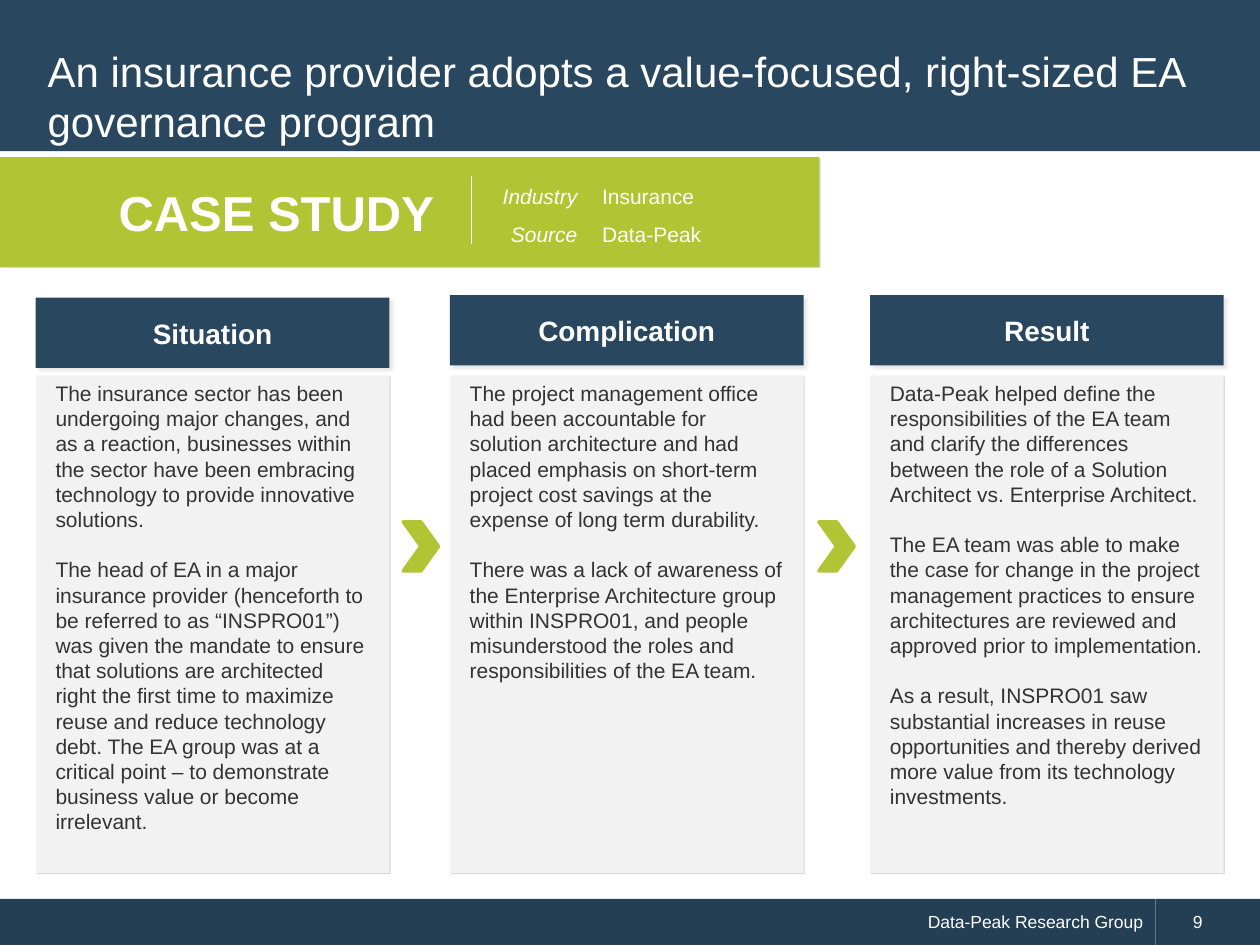
from lxml import etree
from pptx import Presentation
from pptx import util as u
from pptx.dml.color import RGBColor
from pptx.enum import shapes, text
from pptx.oxml import ns

NAVY, DARK_NAVY, LIME = "29475F", "243F54", "B0C534"
WHITE, PALE_GREY, CHARCOAL = "FFFFFF", "F2F2F2", "333333"
LEFT, CENTER, RIGHT = text.PP_ALIGN.LEFT, text.PP_ALIGN.CENTER, text.PP_ALIGN.RIGHT
TOP, MIDDLE = text.MSO_ANCHOR.TOP, text.MSO_ANCHOR.MIDDLE
HEADING_SHADOW = {"alpha": 10, "blur": 2, "distance": 2}
SOFT_SHADOW = {"alpha": 14, "blur": 0, "distance": 1}

COLUMNS = [
    ("Situation", 0.72, 6.0, [
        "The insurance sector has been undergoing major changes, and as a reaction, businesses "
        "within the sector have been embracing technology to provide innovative solutions.",
        "The head of EA in a major insurance provider (henceforth to be referred to as “INSPRO01”) "
        "was given the mandate to ensure that solutions are architected right the first time to "
        "maximize reuse and reduce technology debt. The EA group was at a critical point – to "
        "demonstrate business value or become irrelevant.",
    ]),
    ("Complication", 9.07, 5.95, [
        "The project management office had been accountable for solution architecture and had "
        "placed emphasis on short-term project cost savings at the expense of long term durability.",
        "There was a lack of awareness of the Enterprise Architecture group within INSPRO01, and "
        "people misunderstood the roles and responsibilities of the EA team.",
    ]),
    ("Result", 17.54, 5.95, [
        "Data-Peak helped define the responsibilities of the EA team and clarify the differences "
        "between the role of a Solution Architect vs. Enterprise Architect.",
        "The EA team was able to make the case for change in the project management practices to "
        "ensure architectures are reviewed and approved prior to implementation.",
        "As a result, INSPRO01 saw substantial increases in reuse opportunities and thereby "
        "derived more value from its technology investments.",
    ]),
]


def color(hex_string):
    """Turn a hex string into a colour."""
    return RGBColor.from_string(hex_string)


def add_effects(shape, shadow=None):
    """Give a shape its own effect list, with an outer shadow if one is described."""
    properties = shape._element.spPr
    effects = etree.SubElement(properties, ns.qn("a:effectLst"))
    if shadow:
        outer = etree.SubElement(
            effects, ns.qn("a:outerShdw"), blurRad=str(u.Pt(shadow["blur"])),
            dist=str(u.Pt(shadow["distance"])), dir="2700000", algn="tl", rotWithShape="0")
        tint = etree.SubElement(outer, ns.qn("a:srgbClr"), val="000000")
        etree.SubElement(tint, ns.qn("a:alpha"), val=str(shadow["alpha"] * 1000))


def add_block(parent, box, fill, shadow=None, preset=shapes.MSO_SHAPE.RECTANGLE):
    """Draw a filled preset shape without an outline."""
    shape = parent.add_shape(preset, *map(u.Cm, box))
    shape.fill.solid()
    shape.fill.fore_color.rgb = color(fill)
    shape.line.fill.background()
    add_effects(shape, shadow)
    return shape


def write(shape, paragraphs, size, font_color=WHITE, bold=False, italic=False, align=LEFT,
          anchor=MIDDLE, insets=(0.25, 0.13), left_inset=None, line_spacing=None, gap=0):
    """Write paragraphs of one style into a shape."""
    frame = shape.text_frame
    frame.word_wrap = True
    frame.vertical_anchor = anchor
    side, edge = map(u.Cm, insets)
    frame.margin_left = side if left_inset is None else u.Cm(left_inset)
    frame.margin_right = side
    frame.margin_top = frame.margin_bottom = edge
    for index, content in enumerate(paragraphs):
        paragraph = frame.add_paragraph() if index else frame.paragraphs[0]
        paragraph.alignment = align
        paragraph.line_spacing = line_spacing
        paragraph.space_before = u.Pt(gap if index else 0)
        run = paragraph.add_run()
        run.text = content
        run.font.name = "Arial"
        run.font.size = u.Pt(size)
        run.font.bold = bold
        run.font.italic = italic
        run.font.color.rgb = color(font_color)


def add_footer(slide, left, top, width, height):
    """Draw the footer band with the publisher and the page number."""
    number_width = 2.11
    split = width - number_width
    publisher = add_block(slide.shapes, (left, top, split, height), DARK_NAVY)
    write(publisher, ["Data-Peak Research Group"], 10, align=RIGHT)
    number = add_block(slide.shapes, (left + split, top, number_width, height), DARK_NAVY)
    write(number, ["9"], 10, left_inset=0.76)


def add_title(slide, left, top, width, height):
    """Draw the title band and its heading."""
    add_block(slide.shapes, (left, top, width, height), NAVY)
    box = (left + 0.71, top + 0.71, width - 1.45, 2.44)
    title = slide.shapes.add_textbox(*map(u.Cm, box))
    write(title, ["An insurance provider adopts a value-focused, right-sized EA governance program"], 24)


def add_banner(slide, left, top, width, height):
    """Draw the case study banner with its industry and source."""
    group = slide.shapes.add_group_shape().shapes
    banner = add_block(group, (left, top, width, height), LIME, SOFT_SHADOW)
    write(banner, ["CASE STUDY"], 28, bold=True, left_inset=2.39)
    facts_left, facts_top, label_width = left + 9.48, top + 0.15, 2.41
    labels = group.add_textbox(*map(u.Cm, (facts_left, facts_top, label_width, 1.8)))
    write(labels, ["Industry", "Source"], 12, italic=True, align=RIGHT, anchor=TOP, line_spacing=1.5)
    values = group.add_textbox(*map(u.Cm, (facts_left + label_width, facts_top, 4.34, 1.8)))
    write(values, ["Insurance", "Data-Peak"], 12, anchor=TOP, line_spacing=1.5)
    ends = (left + 9.5, top + 0.38, left + 9.5, top + 1.75)
    divider = group.add_connector(shapes.MSO_CONNECTOR.STRAIGHT, *map(u.Cm, ends))
    divider.line.color.rgb = color(WHITE)
    divider.line.width = u.Pt(0.75)
    add_effects(divider)


def add_column(slide, left, top, width, bottom, heading, paragraphs):
    """Draw one heading with its story panel below."""
    header = add_block(slide.shapes, (left, top, width, 1.42), NAVY, HEADING_SHADOW)
    write(header, [heading], 16, bold=True, align=CENTER, insets=(0.4, 0.2))
    panel_top = 7.57
    panel = add_block(slide.shapes, (left, panel_top, width, bottom - panel_top), PALE_GREY, SOFT_SHADOW)
    write(panel, paragraphs, 12, CHARCOAL, anchor=TOP, insets=(0.4, 0.1), gap=14.4)


def add_chevron(slide, left, top, width, height):
    """Draw a chevron with softened corners that leads to the next column."""
    chevron = add_block(slide.shapes, (left, top, width, height), LIME, preset=shapes.MSO_SHAPE.CHEVRON)
    chevron.line.color.rgb = color(LIME)
    chevron.line.width = u.Pt(2)
    etree.SubElement(chevron.line._get_or_add_ln(), ns.qn("a:round"))


def main():
    """Build the case study slide."""
    presentation = Presentation()
    presentation.slide_width, presentation.slide_height = u.Cm(25.4), u.Cm(19.05)
    slide = presentation.slides.add_slide(presentation.slide_layouts[6])
    add_footer(slide, 0, 18.12, 25.4, 0.93)
    add_title(slide, 0, 0, 25.4, 3.05)
    add_banner(slide, 0, 3.17, 16.52, 2.21)
    for heading, left, top, paragraphs in COLUMNS:
        add_column(slide, left, top, 7.13, 17.6, heading, paragraphs)
    for left in (8.13, 16.51):
        add_chevron(slide, left, 10.52, 0.71, 0.99)
    presentation.save("out.pptx")


if __name__ == "__main__":
    main()
